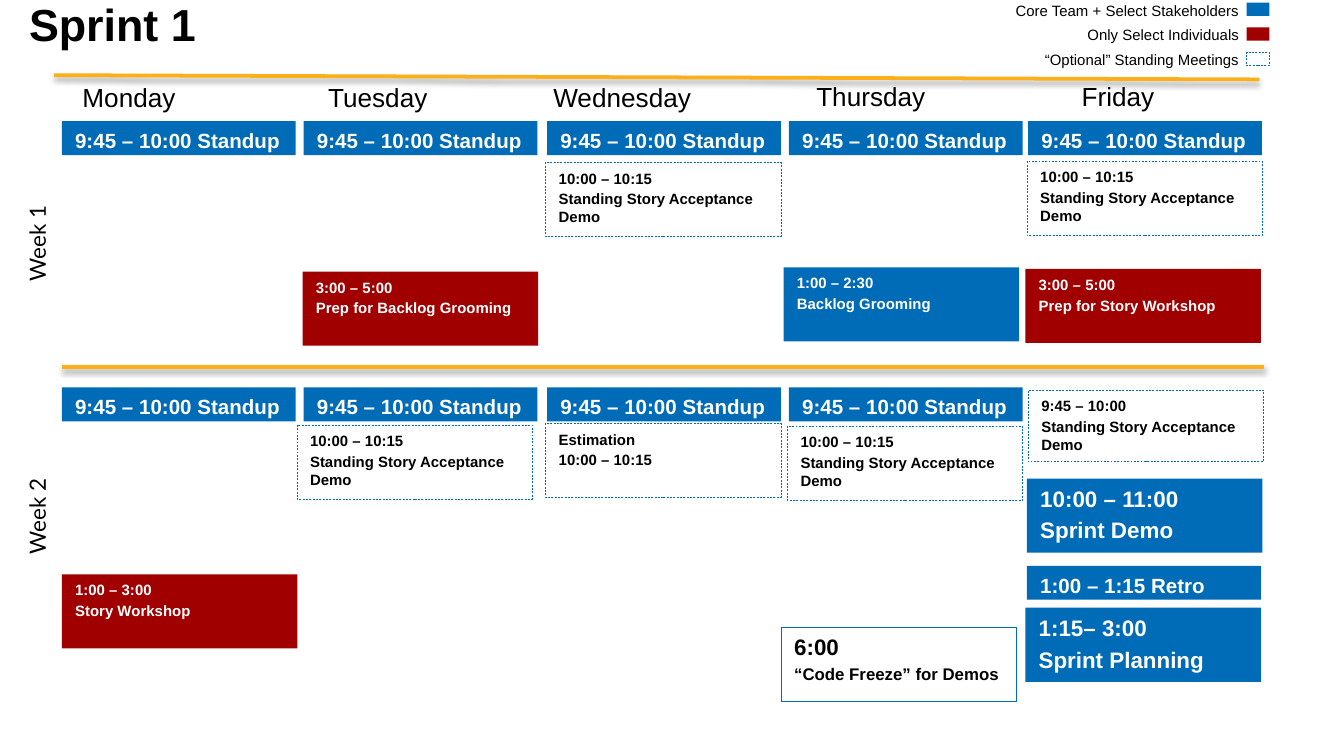
import pptx
import pptx.util
import pptx.dml.color
import pptx.enum.dml
import pptx.enum.shapes
import pptx.enum.text
import lxml.etree
from dataclasses import dataclass

Cm = pptx.util.Cm
Pt = pptx.util.Pt
RGB = pptx.dml.color.RGBColor.from_string
ALIGN = pptx.enum.text.PP_ALIGN
ANCHOR = pptx.enum.text.MSO_ANCHOR


@dataclass(frozen=True)
class Theme:
    black: str = "000000"
    white: str = "FFFFFF"
    blue: str = "006BB6"
    red: str = "A00000"
    gold: str = "FCAF17"
    font: str = "Arial"
    week_font: str = "Lato"
    title: int = 24
    day: int = 14
    large: int = 12
    standup: int = 11
    medium: int = 9
    small: int = 8
    outline: float = 0.25
    divider: int = 2


theme = Theme()
looks = {
    "core": (theme.blue, theme.white, False, False),
    "select": (theme.red, theme.white, False, False),
    "optional": (theme.white, theme.black, True, True),
    "freeze": (theme.white, theme.black, True, False),
}

title = "Sprint 1"
days = [
    ("Monday", 0.23, 1.42),
    ("Tuesday", 4.93, 1.42),
    ("Wednesday", 9.55, 1.42),
    ("Thursday", 14.25, 1.4),
    ("Friday", 18.92, 1.4),
]
weeks = [("Week 1", 4.24), ("Week 2", 9.4)]
legend = [
    ("Core Team + Select Stakeholders", "core", 6.43),
    ("Only Select Individuals", "select", 3.38),
    ("“Optional” Standing Meetings", "optional", 5.69),
]
dividers = [(1.02, 1.42, 23.8, 1.5), (1.17, 6.93, 23.88, 6.93)]

standup = "9:45 – 10:00 Standup"
standup_lefts = [1.17, 5.74, 10.34, 14.91, 19.43]
standup_weeks = [(2.29, 5), (7.32, 4)]
retro = ("1:00 – 1:15 Retro", 19.41, 10.69)

demo = "Standing Story Acceptance Demo"
small = (theme.small, theme.small)
large = (theme.large, theme.large)
meetings = [
    ("10:00 – 10:15", demo, "optional", small, 10.31, 3.07, 1.4),
    ("10:00 – 10:15", demo, "optional", small, 19.41, 3.05, 1.4),
    ("3:00 – 5:00", "Prep for Backlog Grooming", "select", small, 5.72, 5.13, 1.4),
    ("1:00 – 2:30", "Backlog Grooming", "core", small, 14.81, 5.05, 1.4),
    ("3:00 – 5:00", "Prep for Story Workshop", "select", small, 19.38, 5.08, 1.4),
    ("10:00 – 10:15", demo, "optional", small, 5.61, 8.03, 1.4),
    ("Estimation", "10:00 – 10:15", "optional", small, 10.31, 8.0, 1.4),
    ("10:00 – 10:15", demo, "optional", small, 14.88, 8.05, 1.4),
    ("9:45 – 10:00", demo, "optional", small, 19.43, 7.37, 1.35),
    ("10:00 – 11:00", "Sprint Demo", "core", large, 19.41, 9.04, 1.4),
    ("1:00 – 3:00", "Story Workshop", "select", small, 1.17, 10.85, 1.4),
    ("1:15– 3:00", "Sprint Planning", "core", large, 19.38, 11.48, 1.4),
    ("6:00", "“Code Freeze” for Demos", "freeze", (theme.large, theme.medium), 14.76, 11.84, 1.4),
]


def write(frame, lines, color, align=ALIGN.LEFT, anchor=ANCHOR.TOP, font=theme.font, bold=False):
    frame.word_wrap = True
    frame.vertical_anchor = anchor
    for index, (words, size) in enumerate(lines):
        paragraph = frame.add_paragraph() if index else frame.paragraphs[0]
        paragraph.alignment = align
        if index:
            paragraph.space_before = Pt(size * 0.2)
        run = paragraph.add_run()
        run.text = words
        run.font.size = Pt(size)
        run.font.name = font
        run.font.bold = bold
        run.font.color.rgb = RGB(color)


def add_label(slide, words, size, left, top, width, height, **style):
    label = slide.shapes.add_textbox(Cm(left), Cm(top), Cm(width), Cm(height))
    write(label.text_frame, [(words, size)], theme.black, **style)
    return label


def add_block(slide, look, left, top, width, height, lines=()):
    fill, ink, outlined, dashed = looks[look]
    block = slide.shapes.add_shape(
        pptx.enum.shapes.MSO_SHAPE.RECTANGLE, Cm(left), Cm(top), Cm(width), Cm(height))
    block.shadow.inherit = False
    block.fill.solid()
    block.fill.fore_color.rgb = RGB(fill)
    if outlined:
        block.line.color.rgb = RGB(theme.blue)
        block.line.width = Pt(theme.outline)
        if dashed:
            block.line.dash_style = pptx.enum.dml.MSO_LINE.DASH
    else:
        block.line.fill.background()
    if lines:
        write(block.text_frame, lines, ink, bold=True)


def add_divider(slide, x1, y1, x2, y2):
    divider = slide.shapes.add_connector(
        pptx.enum.shapes.MSO_CONNECTOR.STRAIGHT, Cm(x1), Cm(y1), Cm(x2), Cm(y2))
    divider.line.color.rgb = RGB(theme.gold)
    divider.line.width = Pt(theme.divider)
    tag = "{http://schemas.openxmlformats.org/drawingml/2006/main}"
    effects = lxml.etree.SubElement(divider._element.spPr, tag + "effectLst")
    shadow = lxml.etree.SubElement(
        effects, tag + "outerShdw", blurRad=str(Pt(3)), dist=str(Pt(1.8)),
        dir="5400000", rotWithShape="0")
    color = lxml.etree.SubElement(shadow, tag + "srgbClr", val=theme.black)
    lxml.etree.SubElement(color, tag + "alpha", val="35000")


def main():
    deck = pptx.Presentation()
    deck.slide_width, deck.slide_height = Cm(25.4), Cm(14.28)
    slide = deck.slides.add_slide(deck.slide_layouts[6])

    add_label(slide, title, theme.title, 0.3, 0, 23.24, 0.91, anchor=ANCHOR.MIDDLE, bold=True)
    for day, left, top in days:
        add_label(slide, day, theme.day, left, top, 4.42, 0.86, align=ALIGN.CENTER)

    for row, (meaning, look, width) in enumerate(legend):
        label = add_label(slide, meaning, theme.small, 23.55 - width, -0.1 + 0.46 * row,
                          width, 0.61, align=ALIGN.RIGHT)
        frame = label.text_frame
        frame.margin_left = frame.margin_right = Cm(0.13)
        frame.margin_top = frame.margin_bottom = Cm(0.13)
        add_block(slide, look, 23.56, 0.05 + 0.47 * row, 0.43, 0.25)

    for ends in dividers:
        add_divider(slide, *ends)

    for week, top in weeks:
        label = add_label(slide, week, theme.large, -1.65, top, 4.65, 0.71,
                          align=ALIGN.CENTER, font=theme.week_font)
        label.rotation = 270

    short_meetings = [(standup, left, top) for top, count in standup_weeks
                      for left in standup_lefts[:count]] + [retro]
    for words, left, top in short_meetings:
        add_block(slide, "core", left, top, 4.42, 0.64, [(words, theme.standup)])

    for first, second, look, sizes, left, top, height in meetings:
        add_block(slide, look, left, top, 4.45, height, list(zip((first, second), sizes)))

    deck.save("out.pptx")


if __name__ == "__main__":
    main()
